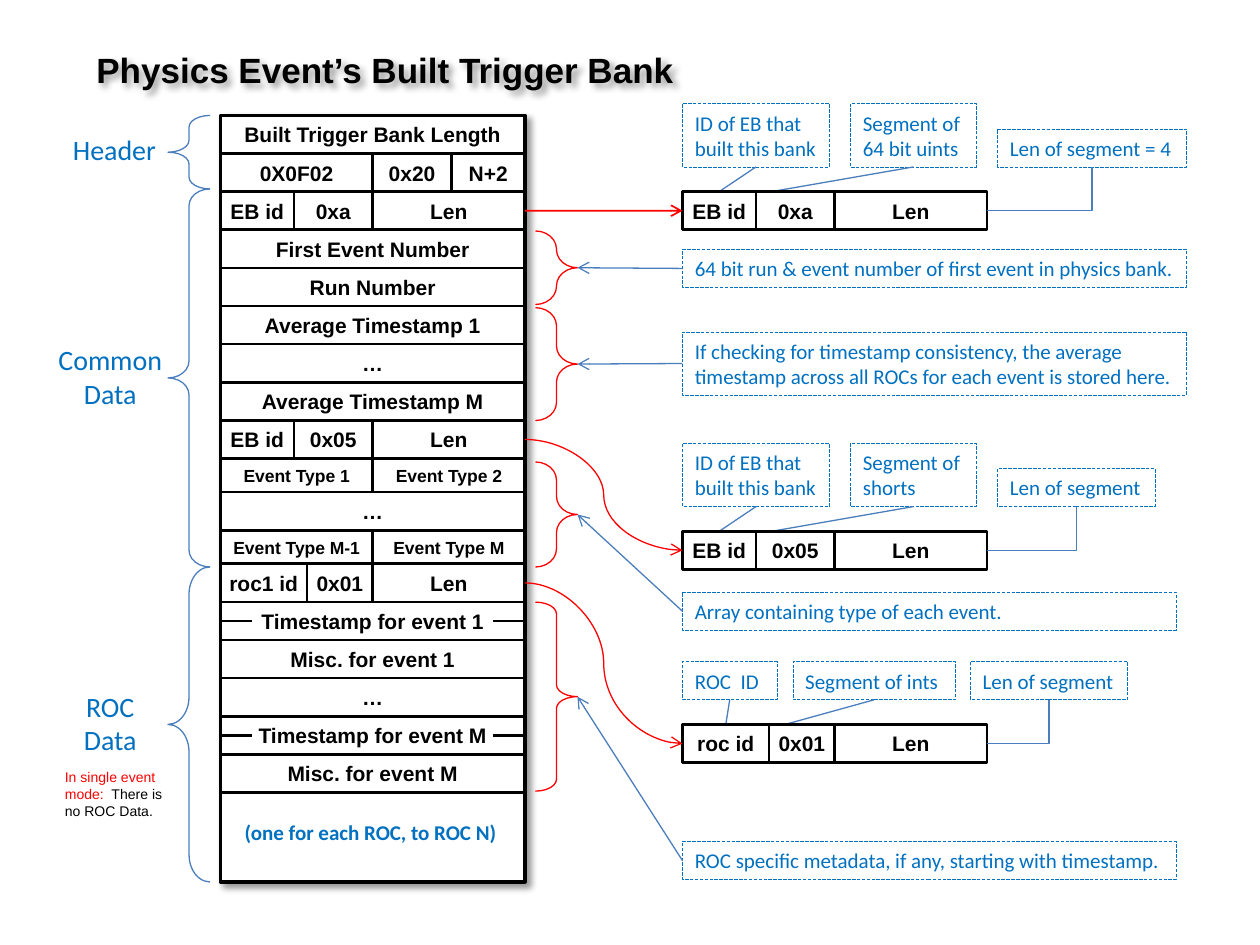
from lxml.etree import SubElement
from pptx import Presentation
from pptx.dml.color import RGBColor
from pptx.enum.dml import MSO_LINE
from pptx.enum.shapes import MSO_CONNECTOR, MSO_SHAPE
from pptx.enum.text import MSO_ANCHOR, PP_ALIGN
from pptx.oxml import parse_xml
from pptx.oxml.ns import nsdecls, qn
from pptx.util import Inches, Pt

BLACK, WHITE = RGBColor(0x00, 0x00, 0x00), RGBColor(0xFF, 0xFF, 0xFF)
RED, BLUE = RGBColor(0xFF, 0x00, 0x00), RGBColor(0x00, 0x70, 0xC0)
STEEL = RGBColor(0x4B, 0x7E, 0xBC)

COLUMNS = 120  # square grid: 120 columns by 90 rows
ROW, SHORT_ROW, DOUBLE_ROW = 3.63, 3.2, 6.05
BANK_LEFT, BANK_TOP, BANK_WIDTH, BANK_HEIGHT = 21, 11, 29, 73
BANK_RIGHT = BANK_LEFT + BANK_WIDTH
DETAIL_LEFT, DATA_BRACE_LEFT, BRACE_WIDTH = 65, 51, 4
CALLOUT_GAP = 2.35

# cells of each word, then its dividers as columns from the bank's left edge
BANK_WORDS = [
    (["Built Trigger Bank Length"], []),
    (["0X0F02", "0x20", "N+2"], [14.5, 22]),
    (["EB id", "0xa", "Len"], [7, 14.5]),
    (["First Event Number"], []),
    (["Run Number"], []),
    (["Average Timestamp 1"], []),
    (["…"], []),
    (["Average Timestamp M"], []),
    (["EB id", "0x05", "Len"], [7, 14.5]),
    (["Event Type 1", "Event Type 2"], [14.5]),
    (["…"], []),
    (["Event Type M-1", "Event Type M"], [14.5]),
    (["roc1 id", "0x01", "Len"], [8.25, 14.5]),
    (["Timestamp for event 1"], []),
    (["Misc. for event 1"], []),
    (["…"], []),
    (["Timestamp for event M"], []),
    (["Misc. for event M"], []),
]
# top, cells, dividers, callouts as (left, width, height, text)
SEGMENT_HEADERS = [
    (18.25, ["EB id", "0xa", "Len"], [7, 14.5],
     [(65, 14, DOUBLE_ROW, "ID of EB that built this bank"),
      (81, 12, DOUBLE_ROW, "Segment of 64 bit uints"),
      (95, 18, ROW, "Len of segment = 4")]),
    (50.6, ["EB id", "0x05", "Len"], [7, 14.5],
     [(65, 14, DOUBLE_ROW, "ID of EB that built this bank"),
      (81, 12, DOUBLE_ROW, "Segment of shorts"),
      (95, 15, ROW, "Len of segment")]),
    (69, ["roc id", "0x01", "Len"], [8.25, 14.5],
     [(65, 9, ROW, "ROC  ID"),
      (75.5, 15.5, ROW, "Segment of ints"),
      (92.4, 15, ROW, "Len of segment")]),
]
# top, width, height, text, then top, height and curl of the brace
NOTES = [
    (23.75, 48, ROW, "64 bit run & event number of first event in physics bank.",
     22, 7, 0.43),
    (31.6, 48, DOUBLE_ROW, "If checking for timestamp consistency, the average "
     "timestamp across all ROCs for each event is stored here.", 29.3, 10.75, 0.43),
    (56.4, 47, ROW, "Array containing type of each event.", 44, 10, 0.43),
    (80.15, 47, ROW, "ROC specific metadata, if any, starting with timestamp.",
     57.35, 18, 0.28),
]


class BankDiagram:
    """Holds the slide and draws each kind of element in grid units."""

    def __init__(self, presentation):
        self.slide = presentation.slides.add_slide(presentation.slide_layouts[6])
        self.unit = presentation.slide_width / COLUMNS

    def lengths(self, *values):
        return [round(value * self.unit) for value in values]

    def fill_text(self, shape, text, size=12, font="Arial", color=BLACK, bold=False,
                  align=PP_ALIGN.LEFT):
        frame = shape.text_frame
        frame.word_wrap, frame.vertical_anchor = True, MSO_ANCHOR.MIDDLE
        frame.text = text
        for paragraph in frame.paragraphs:
            paragraph.alignment = align
            paragraph.font.size, paragraph.font.name = Pt(size), font
            paragraph.font.bold = bold
            paragraph.font.color.rgb = color
        return frame

    def text(self, box, text, **style):
        shape = self.slide.shapes.add_textbox(*self.lengths(*box))
        self.fill_text(shape, text, **style)
        return shape

    def shape(self, kind, box, color, width, fill=None):
        shape = self.slide.shapes.add_shape(kind, *self.lengths(*box))
        shape.shadow.inherit = False
        shape.fill.background()
        if fill is not None:
            shape.fill.solid()
            shape.fill.fore_color.rgb = fill
        shape.line.color.rgb, shape.line.width = color, Pt(width)
        return shape

    def cast_shadow(self, shape):
        shape.shadow.inherit = False
        effects = shape._element.spPr.find(qn("a:effectLst"))
        effects.append(parse_xml(
            f'<a:outerShdw {nsdecls("a")} blurRad="{Pt(4)}" dist="{Pt(3)}" dir="2700000">'
            f'<a:srgbClr val="{BLACK}"><a:alpha val="40000"/></a:srgbClr></a:outerShdw>'))

    def brace(self, left, top, height, curl, color, mirrored=False):
        box = (left, top, BRACE_WIDTH, height)
        shape = self.shape(MSO_SHAPE.LEFT_BRACE, box, color, 0.75)
        shape.adjustments[0] = curl
        if mirrored:
            shape._element.spPr.xfrm.set("flipH", "1")

    def connector(self, start, end, color=STEEL, width=0.75,
                  kind=MSO_CONNECTOR.STRAIGHT, arrow=False):
        connector = self.slide.shapes.add_connector(kind, *self.lengths(*start, *end))
        connector.line.color.rgb, connector.line.width = color, Pt(width)
        properties = connector._element.spPr
        if kind == MSO_CONNECTOR.ELBOW:  # a single corner
            properties.find(qn("a:prstGeom")).set("prst", "bentConnector2")
        if arrow:
            SubElement(properties.find(qn("a:ln")), qn("a:tailEnd"), type="arrow")
        SubElement(properties, qn("a:effectLst"))

    def word(self, left, top, height, cells, dividers, size=12, fill=None):
        """Draw one bank word, each cell's text centred between its dividers."""
        box = (left, top, BANK_WIDTH, height)
        shape = self.shape(MSO_SHAPE.RECTANGLE, box, BLACK, 1.5, fill)
        if not dividers:
            self.fill_text(shape, cells[0], size, bold=True, align=PP_ALIGN.CENTER)
            return
        frame = self.fill_text(shape, "\t" + "\t".join(cells), size, bold=True)
        frame.margin_left = frame.margin_right = 0
        tabs = parse_xml(f'<a:tabLst {nsdecls("a")}/>')
        edges = [0, *dividers, BANK_WIDTH]
        for start, end in zip(edges, edges[1:]):
            position, = self.lengths((start + end) / 2)
            SubElement(tabs, qn("a:tab"), pos=str(position), algn="ctr")
        frame.paragraphs[0]._p.get_or_add_pPr().insert(0, tabs)
        for x in (left + divider for divider in dividers):
            self.connector((x, top), (x, top + height), BLACK, 1.5)

    def callout(self, left, top, width, height, text):
        box = (left, top, width, height)
        shape = self.shape(MSO_SHAPE.RECTANGLE, box, BLUE, 0.25)
        shape.line.dash_style = MSO_LINE.LONG_DASH
        self.fill_text(shape, text, font="Calibri", color=BLUE)

    def segment_header(self, top, cells, dividers, callouts):
        bottom = top - CALLOUT_GAP
        for left, width, height, text in callouts:
            self.callout(left, bottom - height, width, height, text)
        first, second, third = [left + width / 2 for left, width, *_ in callouts]
        self.connector((first, bottom), (DETAIL_LEFT + dividers[0] / 2, top))
        self.connector((second, bottom), (DETAIL_LEFT + dividers[0] + 1.5, top))
        self.word(DETAIL_LEFT, top, ROW, cells, dividers, fill=WHITE)
        self.connector((DETAIL_LEFT + BANK_WIDTH, top + ROW / 2), (third, bottom),
                       kind=MSO_CONNECTOR.ELBOW)

    def bank(self):
        """Draw the bank and return the middles of its segment header words."""
        box = (BANK_LEFT, BANK_TOP, BANK_WIDTH, BANK_HEIGHT)
        self.cast_shadow(self.shape(MSO_SHAPE.RECTANGLE, box, BLACK, 2, WHITE))
        top, header_middles = BANK_TOP, []
        for cells, dividers in BANK_WORDS:
            small = cells[0].startswith("Event Type")
            height = SHORT_ROW if small else ROW
            self.word(BANK_LEFT, top, height, cells, dividers, 10 if small else 12)
            middle = top + height / 2
            if cells[-1] == "Len":
                header_middles.append(middle)
            if cells[0].startswith("Timestamp"):
                for x in (BANK_LEFT, BANK_RIGHT - 3):
                    self.connector((x, middle), (x + 3, middle), BLACK, 1.5)
            top += height
        return header_middles


def main():
    presentation = Presentation()
    presentation.slide_width, presentation.slide_height = Inches(10), Inches(7.5)
    diagram = BankDiagram(presentation)
    diagram.cast_shadow(diagram.text(
        (8, 4, 58, 5.25), "Physics Event’s Built Trigger Bank", size=20, bold=True))

    blue_label = dict(font="Calibri", color=BLUE, align=PP_ALIGN.CENTER)
    diagram.text((5.4, 12, 11, 4.45), "Header", size=16, **blue_label)
    diagram.text((4, 32, 13, 7.65), "Common Data", size=16, **blue_label)
    diagram.text((6.5, 65, 8, 7.65), "ROC\nData", size=16, **blue_label)
    for top, height, curl in [(11, 7, 0.28), (18, 36, 0.4), (54, 30, 0.65)]:
        diagram.brace(16, top, height, curl, STEEL)
    remark = diagram.text((5, 72.6, 13, 6), "In single event mode:", size=8)
    paragraph = remark.text_frame.paragraphs[0]
    paragraph.runs[0].font.color.rgb = RED
    paragraph.add_run().text = "  There is no ROC Data."

    header_middles = diagram.bank()
    diagram.text((21.8, 77.4, 27, ROW), "(one for each ROC, to ROC N)", bold=True, **blue_label)
    for middle, header in zip(header_middles, SEGMENT_HEADERS):
        diagram.segment_header(*header)
        target = header[0] + ROW / 2
        width, kind = ((1, MSO_CONNECTOR.STRAIGHT) if abs(target - middle) < 1
                       else (0.75, MSO_CONNECTOR.CURVE))
        diagram.connector((BANK_RIGHT, middle), (DETAIL_LEFT, target), RED, width, kind, True)
    for top, width, height, text, brace_top, brace_height, curl in NOTES:
        diagram.callout(DETAIL_LEFT, top, width, height, text)
        diagram.brace(DATA_BRACE_LEFT, brace_top, brace_height, curl, RED, mirrored=True)
        tip = (DATA_BRACE_LEFT + BRACE_WIDTH, brace_top + brace_height / 2)
        diagram.connector((DETAIL_LEFT, top + height / 2), tip, arrow=True)
    presentation.save("out.pptx")


if __name__ == "__main__":
    main()
